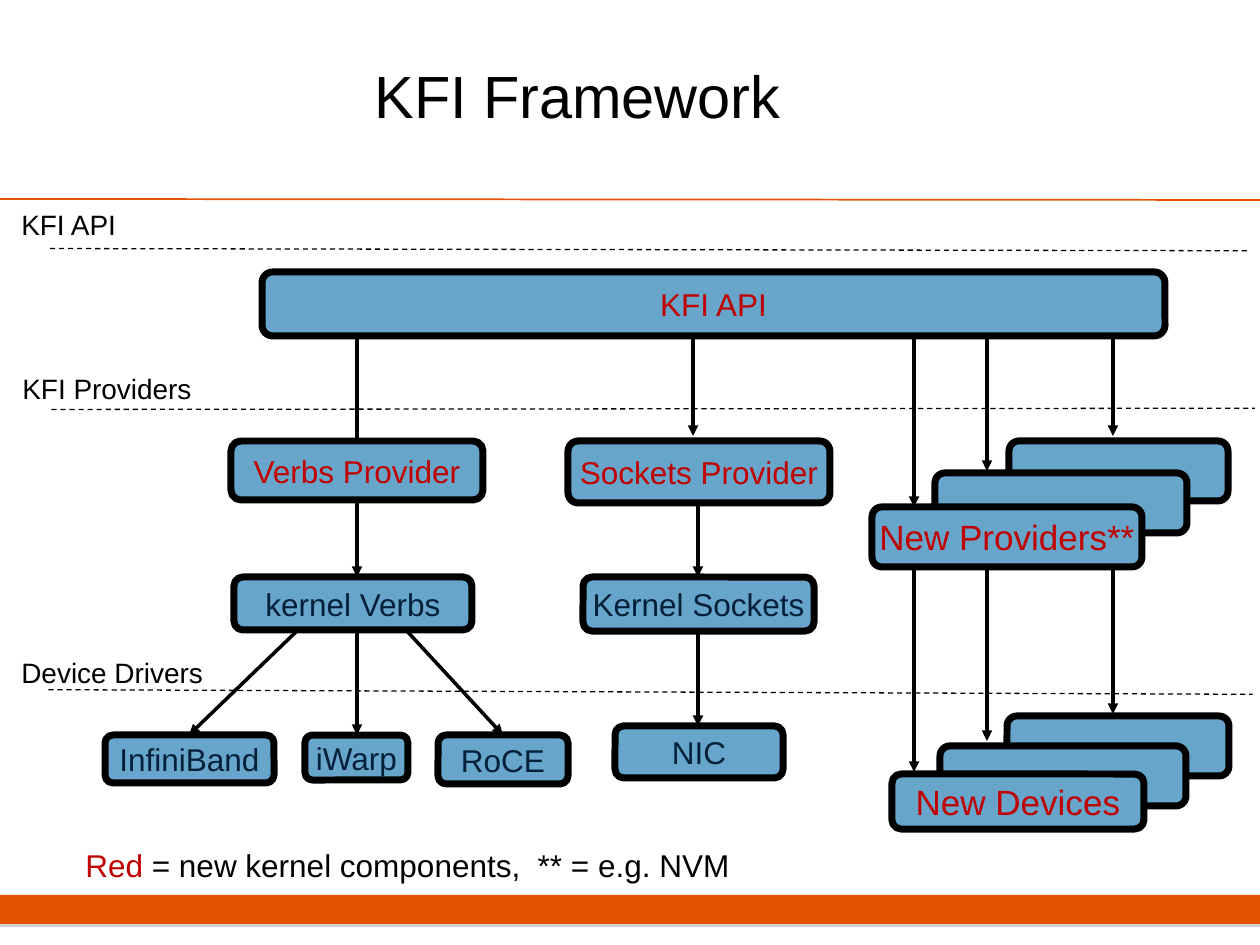
"""Build the KFI Framework layer diagram slide."""
from pptx import Presentation
from pptx.dml.color import RGBColor
from pptx.enum.dml import MSO_LINE
from pptx.enum.shapes import MSO_CONNECTOR, MSO_SHAPE
from pptx.enum.text import MSO_ANCHOR, PP_ALIGN
from pptx.oxml import parse_xml
from pptx.oxml.ns import nsdecls
from pptx.util import Emu, Pt

RECT, ROUNDED = MSO_SHAPE.RECTANGLE, MSO_SHAPE.ROUNDED_RECTANGLE
CALLOUT = MSO_SHAPE.LINE_CALLOUT_1_NO_BORDER
STRAIGHT, DASH = MSO_CONNECTOR.STRAIGHT, MSO_LINE.DASH
MIDDLE, LEFT, CENTER = MSO_ANCHOR.MIDDLE, PP_ALIGN.LEFT, PP_ALIGN.CENTER

THEME = {
    "font": "Arial",
    "color": {"ink": "000000", "box": "67A5CB", "new": "C00000",
              "existing": "02203A", "accent": "E55302"},
    "size": {"title": 34, "large": 20, "body": 18, "label": 16},
}

TITLE = ("KFI Framework", (63, 32, 1029, 126))
LEGEND = [("Red", "new"), (" = new kernel components,  ** = e.g. NVM", "ink")]
LEGEND_AT = (73, 840, 693, 50)

LAYERS = [
    ("KFI API", (9, 210, 171, 28), (1.38, 0.24, 1.46, 7.26)),
    ("KFI Providers", (10, 378, 218, 21), (1.5, 0.19, 1.44, 5.71)),
    ("Device Drivers", (9, 662, 232, 21), (1.32, 0.17, 1.54, 5.36)),
]

STACKED = [
    (1007, 716, 222, 60), (940, 746, 246, 60),
    (1009, 441, 219, 60), (935, 473, 252, 60),
]

BOXES = [
    ("KFI API", (262, 272, 903, 64), "new", "body"),
    ("Verbs Provider", (231, 441, 252, 59), "new", "body"),
    ("Sockets Provider", (568, 441, 262, 62), "new", "body"),
    ("New Providers**", (872, 507, 270, 60), "new", "large"),
    ("kernel Verbs", (234, 577, 238, 53), "existing", "body"),
    ("Kernel Sockets", (583, 577, 231, 54), "existing", "body"),
    ("InfiniBand", (105, 735, 169, 48), "existing", "body"),
    ("iWarp", (305, 735, 103, 45), "existing", "body"),
    ("RoCE", (438, 735, 130, 49), "existing", "body"),
    ("NIC", (615, 726, 168, 52), "existing", "body"),
    ("New Devices", (892, 774, 252, 55), "new", "large"),
]

DROPS = [
    (357, [(336, 462), (500, 577), (577, 735)]),
    (693, [(336, 436)]),
    (698, [(503, 577), (631, 726)]),
    (914, [(336, 507), (567, 772)]),
    (987, [(336, 471), (567, 741)]),
    (1113, [(336, 436), (567, 714)]),
]
BRANCHES = [(353, 577, 189, 735), (357, 577, 503, 735)]


def px(*values):
    return [Emu(round(v * 914400 / 126)) for v in values]


def color(name):
    return RGBColor.from_string(THEME["color"][name])


def style(p, size, ink=None, align=LEFT):
    p.alignment = align
    p.font.name = THEME["font"]
    p.font.size = Pt(THEME["size"][size])
    if ink:
        p.font.color.rgb = color(ink)


def add_shape(slide, kind, at, fill=None, line=None, width=0):
    s = slide.shapes.add_shape(kind, *px(*at))
    s.shadow.inherit = False
    if fill:
        s.fill.solid()
        s.fill.fore_color.rgb = color(fill)
    else:
        s.fill.background()
    if line:
        s.line.color.rgb = color(line)
        s.line.width = Pt(width)
    else:
        s.line.fill.background()
    return s


def add_box(slide, at):
    return add_shape(slide, ROUNDED, at, "box", "ink", 4)


def set_text(s, text, size, ink, align, wrap):
    tf = s.text_frame
    tf.word_wrap = wrap
    tf.vertical_anchor = MIDDLE
    p = tf.paragraphs[0]
    p.text = text
    style(p, size, ink, align)


def add_line(slide, ends, ink, width, arrow=False):
    c = slide.shapes.add_connector(STRAIGHT, *px(*ends))
    c.line.color.rgb = color(ink)
    c.line.width = Pt(width)
    if arrow:
        c.line._get_or_add_ln().append(
            parse_xml(f'<a:tailEnd {nsdecls("a")} type="triangle"/>'))
    c._element.spPr.append(parse_xml(f'<a:effectLst {nsdecls("a")}/>'))


def add_footer_bar(slide):
    s = add_shape(slide, RECT, (0, 895, 1260, 29), "accent")
    effects = s._element.spPr.find(
        "{http://schemas.openxmlformats.org/drawingml/2006/main}effectLst")
    effects.append(parse_xml(
        f'<a:outerShdw {nsdecls("a")} dist="23000" dir="5400000" rotWithShape="0">'
        '<a:srgbClr val="808080"><a:alpha val="35000"/></a:srgbClr></a:outerShdw>'))


def add_legend(slide):
    tf = slide.shapes.add_textbox(*px(*LEGEND_AT)).text_frame
    tf.word_wrap = True
    p = tf.paragraphs[0]
    style(p, "body")
    for text, ink in LEGEND:
        r = p.add_run()
        r.text = text
        r.font.color.rgb = color(ink)


def main():
    prs = Presentation()
    prs.slide_width, prs.slide_height = px(1260, 945)
    slide = prs.slides.add_slide(prs.slide_layouts[5])

    add_footer_bar(slide)
    add_line(slide, (0, 199, 1260, 200), "accent", 1)

    text, at = TITLE
    title = slide.shapes.title
    title.left, title.top, title.width, title.height = px(*at)
    set_text(title, text, "title", "ink", CENTER, True)

    for text, at, leader in LAYERS:
        s = add_shape(slide, CALLOUT, at, line="ink", width=0.75)
        s.line.dash_style = DASH
        for i, value in enumerate(leader):
            s.adjustments[i] = value
        set_text(s, text, "label", "ink", LEFT, True)

    for at in STACKED:
        add_box(slide, at)
    drops = [(x, top, x, bottom) for x, spans in DROPS for top, bottom in spans]
    for ends in drops + BRANCHES:
        add_line(slide, ends, "ink", 2, arrow=True)
    for text, at, ink, size in BOXES:
        set_text(add_box(slide, at), text, size, ink, CENTER, False)

    add_legend(slide)
    prs.save("out.pptx")


if __name__ == "__main__":
    main()
